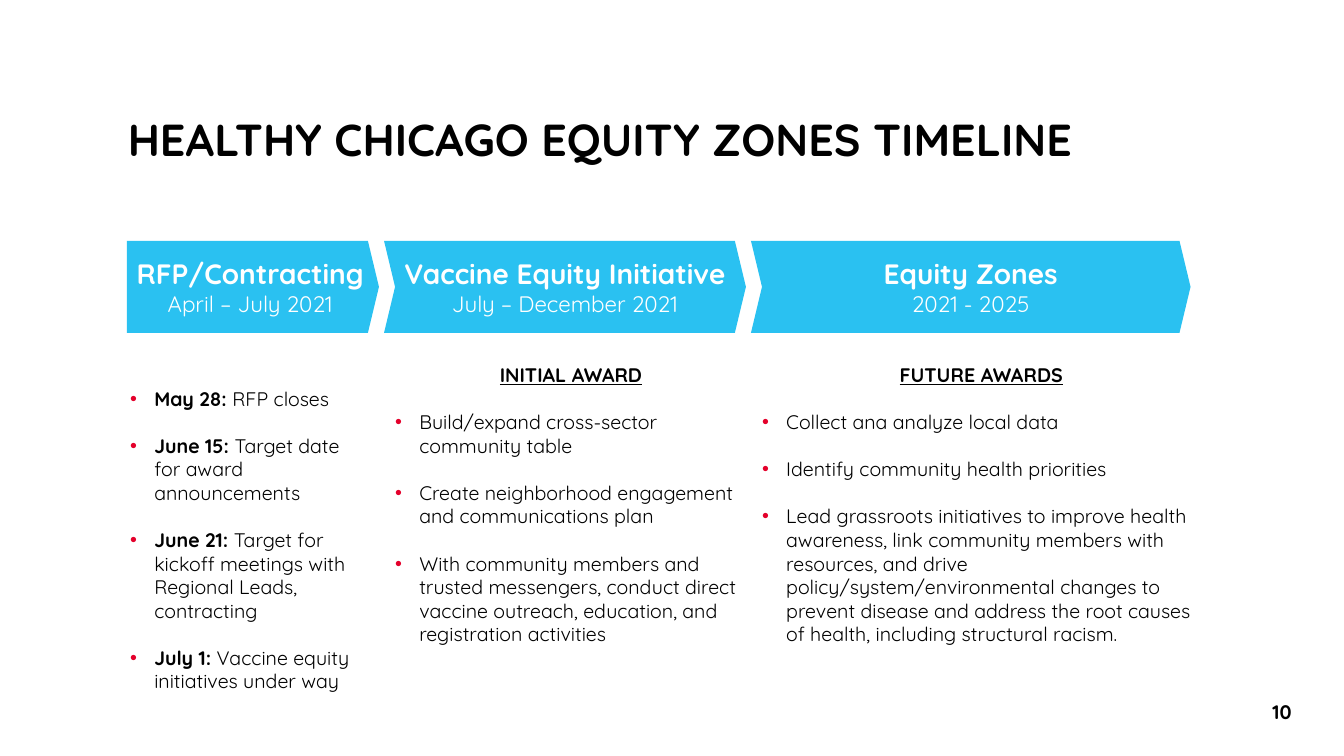
from lxml.etree import SubElement
from pptx import Presentation
from pptx.dml.color import RGBColor
from pptx.enum.shapes import MSO_SHAPE
from pptx.enum.text import MSO_ANCHOR, PP_ALIGN
from pptx.oxml.ns import qn
from pptx.util import Pt

TITLE = "HEALTHY CHICAGO EQUITY ZONES TIMELINE"
PAGE_NUMBER = "10"
# Bullets are pairs of a bold lead-in and the plain text after it.
PHASES = [
    {
        "name": "RFP/Contracting", "dates": "April – July 2021",
        "outline": MSO_SHAPE.PENTAGON, "arrow_span": (90.7, 180),
        "award": "", "text_span": (85, 180),
        "bullets": [
            ("May 28: ", "RFP closes"),
            ("June 15: ", "Target date for award announcements"),
            ("June 21: ", "Target for kickoff meetings with Regional Leads, contracting"),
            ("July 1: ", "Vaccine equity initiatives under way"),
        ],
    },
    {
        "name": "Vaccine Equity Initiative", "dates": "July – December 2021",
        "outline": MSO_SHAPE.CHEVRON, "arrow_span": (274.3, 258.5),
        "award": "INITIAL AWARD", "text_span": (274.3, 258.5),
        "bullets": [
            ("", "Build/expand cross-sector community table"),
            ("", "Create neighborhood engagement and communications plan"),
            ("", "With community members and trusted messengers, conduct direct "
                 "vaccine outreach, education, and registration activities"),
        ],
    },
    {
        "name": "Equity Zones", "dates": "2021 - 2025",
        "outline": MSO_SHAPE.CHEVRON, "arrow_span": (536.4, 314),
        "award": "FUTURE AWARDS", "text_span": (536.4, 320.4),
        "bullets": [
            ("", "Collect ana analyze local data"),
            ("", "Identify community health priorities"),
            ("", "Lead grassroots initiatives to improve health awareness, link "
                 "community members with resources, and drive "
                 "policy/system/environmental changes to prevent disease and address "
                 "the root causes of health, including structural racism."),
        ],
    },
]

FONT = "Quicksand"
BLACK, WHITE, BLUE, RED = "000000", "FFFFFF", "2AC1F1", "E4002B"
ARROW_TOP, ARROW_HEIGHT = 172, 65.8
TEXT_TOP, TEXT_BOTTOM = 259.2, 456
LINE = 16.84


def color(hex_code):
    return RGBColor.from_string(hex_code)


def style(font, size, hex_code=BLACK, bold=None):
    font.name, font.size, font.bold = FONT, Pt(size), bold
    font.color.rgb = color(hex_code)


def set_frame(frame, anchor, side_inset=0):
    frame.word_wrap = True
    frame.vertical_anchor = anchor
    frame.margin_left = frame.margin_right = Pt(side_inset)
    frame.margin_top = frame.margin_bottom = 0


def add_text_box(slide, left, top, width, height, anchor=MSO_ANCHOR.TOP, side_inset=0):
    box = slide.shapes.add_textbox(Pt(left), Pt(top), Pt(width), Pt(height))
    set_frame(box.text_frame, anchor, side_inset)
    return box.text_frame


def set_indent(paragraph, left, first_line=0):
    properties = paragraph._p.get_or_add_pPr()
    properties.set("marL", str(Pt(left)))
    properties.set("indent", str(Pt(first_line)))
    return properties


def add_bullet_mark(paragraph):
    properties = set_indent(paragraph, 25.2, -17.3)
    mark_color = SubElement(properties, qn("a:buClr"))
    SubElement(mark_color, qn("a:srgbClr"), val=RED)
    SubElement(properties, qn("a:buFont"), typeface="Arial")
    SubElement(properties, qn("a:buChar"), char="•")


def add_arrow(slide, phase):
    left, width = phase["arrow_span"]
    arrow = slide.shapes.add_shape(
        phase["outline"], Pt(left), Pt(ARROW_TOP), Pt(width), Pt(ARROW_HEIGHT))
    arrow.adjustments[0] = 0.12
    arrow.shadow.inherit = False
    arrow.fill.solid()
    arrow.fill.fore_color.rgb = color(BLUE)
    arrow.line.fill.background()
    set_frame(arrow.text_frame, MSO_ANCHOR.MIDDLE)
    label = arrow.text_frame.paragraphs[0]
    label.alignment = PP_ALIGN.CENTER
    name = label.add_run()
    name.text = phase["name"]
    style(name.font, 20, WHITE, True)
    label.add_line_break()
    dates = label.add_run()
    dates.text = phase["dates"]
    style(dates.font, 16, WHITE, False)


def add_details(slide, phase):
    left, width = phase["text_span"]
    top = TEXT_TOP if phase["award"] else TEXT_TOP + LINE
    frame = add_text_box(slide, left, top, width, TEXT_BOTTOM - top)
    paragraph = frame.paragraphs[0]
    if phase["award"]:
        paragraph.text = phase["award"]
        paragraph.alignment = PP_ALIGN.CENTER
        paragraph.line_spacing = Pt(LINE)
        set_indent(paragraph, 8.6)
        style(paragraph.font, 14, bold=True)
        paragraph.font.underline = True
    for index, (lead, text) in enumerate(phase["bullets"]):
        if index or phase["award"]:
            paragraph = frame.add_paragraph()
            paragraph.space_before = Pt(LINE)
        paragraph.line_spacing = Pt(LINE)
        add_bullet_mark(paragraph)
        style(paragraph.font, 14)
        if lead:
            lead_run = paragraph.add_run()
            lead_run.text = lead
            lead_run.font.bold = True
        paragraph.add_run().text = text


def main():
    deck = Presentation()
    deck.slide_width, deck.slide_height = Pt(960), Pt(540)
    slide = deck.slides.add_slide(deck.slide_layouts[6])

    number = add_text_box(slide, 890.6, 493.9, 50.4, 28.8, MSO_ANCHOR.MIDDLE).paragraphs[0]
    number.text = PAGE_NUMBER
    number.alignment = PP_ALIGN.CENTER
    style(number.font, 14, bold=True)

    title = add_text_box(slide, 84.2, 38.2, 826.6, 126.7, MSO_ANCHOR.MIDDLE, 7.2).paragraphs[0]
    title.text = TITLE
    title.line_spacing = 0.9
    style(title.font, 32, bold=True)

    for phase in PHASES:
        add_arrow(slide, phase)
        add_details(slide, phase)
    deck.save("out.pptx")


if __name__ == "__main__":
    main()
